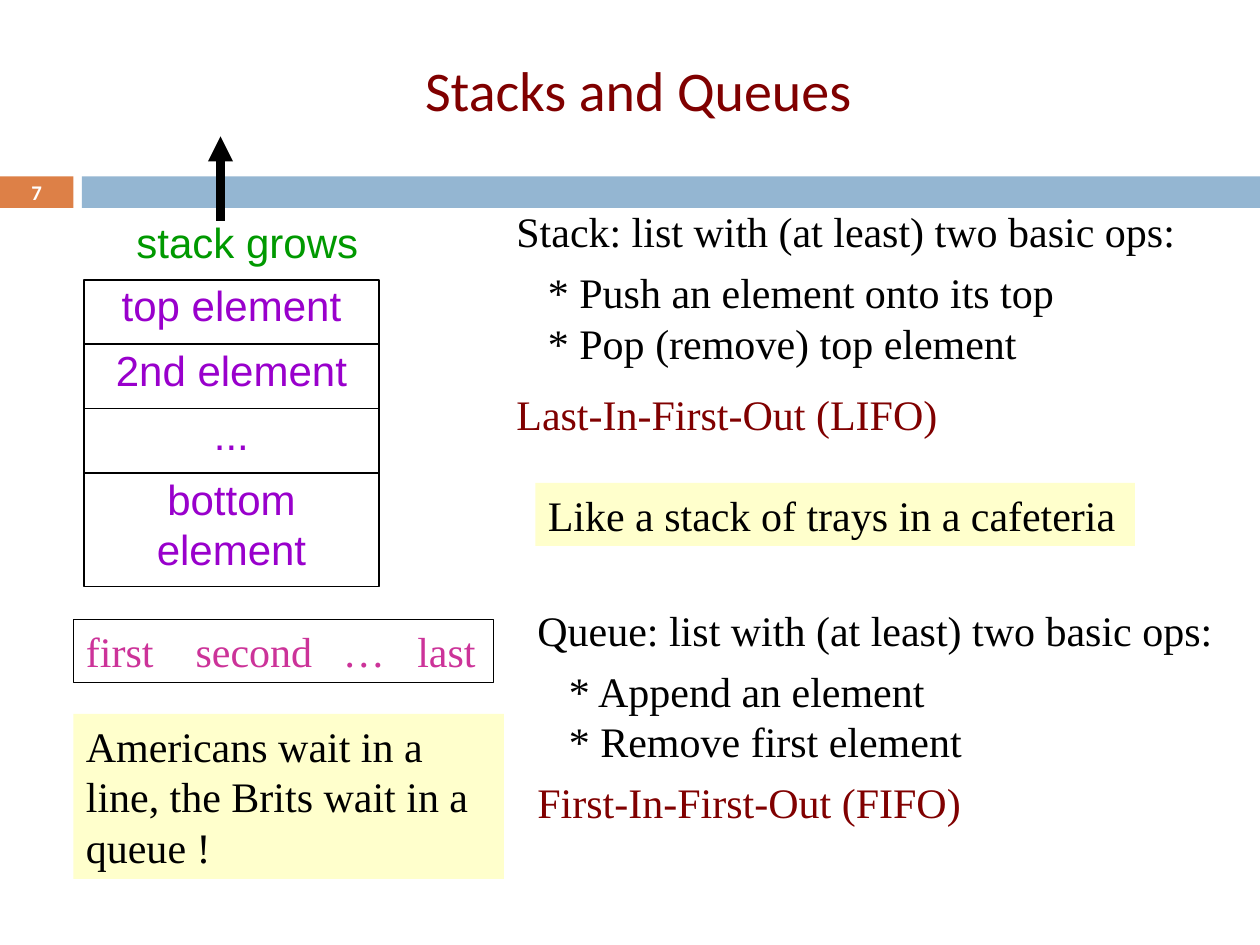
from pptx import Presentation
from pptx.dml.color import RGBColor
from pptx.enum.shapes import MSO_CONNECTOR, MSO_SHAPE
from pptx.enum.text import MSO_ANCHOR, MSO_AUTO_SIZE, PP_ALIGN
from pptx.oxml.ns import qn
from pptx.util import Inches, Pt
from lxml import etree

RECTANGLE = MSO_SHAPE.RECTANGLE
STRAIGHT = MSO_CONNECTOR.STRAIGHT
TOP, MIDDLE = MSO_ANCHOR.TOP, MSO_ANCHOR.MIDDLE
LEFT, CENTER = PP_ALIGN.LEFT, PP_ALIGN.CENTER
GROW = MSO_AUTO_SIZE.SHAPE_TO_FIT_TEXT
FIXED = MSO_AUTO_SIZE.NONE

COLUMNS, ROWS = 120, 90
SERIF, SANS, HEADING = "Times New Roman", "Arial", "Calibri"
BLACK, WHITE, MAROON, CREAM = "000000", "FFFFFF", "800000", "FFFFCC"
PURPLE, GREEN, PINK = "9900CC", "009900", "CC3399"
ORANGE, BLUE = "DD8047", "94B6D2"
DEFAULT_INSETS = (0.1, 0.05, 0.1, 0.05)


def color(value):
    return RGBColor.from_string(value)


class SlideBuilder:
    def __init__(self, deck):
        self.slide = deck.slides.add_slide(deck.slide_layouts[6])
        self.column = deck.slide_width / COLUMNS
        self.row = deck.slide_height / ROWS

    def place(self, x, y, width, height):
        return (round(x * self.column), round(y * self.row),
                round(width * self.column), round(height * self.row))

    def box(self, area, fill=None, line=None, weight=0.75):
        shape = self.slide.shapes.add_shape(RECTANGLE, *self.place(*area))
        shape.shadow.inherit = False
        if fill:
            shape.fill.solid()
            shape.fill.fore_color.rgb = color(fill)
        else:
            shape.fill.background()
        if line:
            shape.line.color.rgb = color(line)
            shape.line.width = Pt(weight)
        else:
            shape.line.fill.background()
        return shape

    def label(self, area):
        return self.slide.shapes.add_textbox(*self.place(*area))

    def frame(self, shape, anchor=TOP, insets=DEFAULT_INSETS, wrap=True, fit=GROW):
        frame = shape.text_frame
        frame.word_wrap = wrap
        frame.auto_size = fit
        frame.vertical_anchor = anchor
        (frame.margin_left, frame.margin_top,
         frame.margin_right, frame.margin_bottom) = map(Inches, insets)
        return frame

    def text(self, frame, words, ink=BLACK, font=SERIF, size=24, bold=False,
             align=LEFT, before=0, indent=0, tabs=()):
        paragraph = frame.paragraphs[0]
        if paragraph.runs:
            paragraph = frame.add_paragraph()
        paragraph.alignment = align
        paragraph.space_before = Pt(before)
        properties = paragraph._p.get_or_add_pPr()
        if indent:
            properties.set("marL", str(Inches(indent)))
            properties.set("indent", "0")
        if tabs:
            stops = etree.SubElement(properties, qn("a:tabLst"))
            for stop in tabs:
                etree.SubElement(stops, qn("a:tab"), pos=str(Inches(stop)), algn="l")
        run = paragraph.add_run()
        run.text = words
        run.font.name = font
        run.font.size = Pt(size)
        run.font.bold = bold
        run.font.color.rgb = color(ink)

    def operations(self, area, heading, steps, rule, rule_gap):
        frame = self.frame(self.label(area))
        self.text(frame, heading)
        for index, step in enumerate(steps):
            self.text(frame, step, before=0 if index else 6, indent=0.25)
        self.text(frame, rule, MAROON, before=rule_gap)

    def arrow(self, start, end, weight):
        x1, y1, x2, y2 = self.place(*start, *end)
        connector = self.slide.shapes.add_connector(STRAIGHT, x1, y1, x2, y2)
        connector.line.color.rgb = color(BLACK)
        connector.line.width = Pt(weight)
        etree.SubElement(connector.line._get_or_add_ln(), qn("a:tailEnd"), type="triangle")
        etree.SubElement(connector._element.spPr, qn("a:effectLst"))


def main():
    deck = Presentation()
    deck.slide_width, deck.slide_height = Inches(10), Inches(7.5)
    page = SlideBuilder(deck)

    page.box((0, 16.8, 7, 3), ORANGE)
    page.box((7.8, 16.8, 112.2, 3), BLUE)
    title = page.frame(page.label((6.5, 4, 109.1, 9)), MIDDLE,
                       (0.1, 0.05, 0.14, 0.05), fit=FIXED)
    page.text(title, "Stacks and Queues", MAROON, HEADING, 32, align=CENTER)
    number = page.frame(page.label((0, 16.7, 7, 3.2)), MIDDLE, fit=FIXED)
    page.text(number, "7", WHITE, HEADING, 11.9, True, CENTER)

    stack_top, cell_height, bottom_height = 26.64, 6.14, 10.8
    elements = ["top element", "2nd element", "...", "bottom element"]
    for index, element in enumerate(elements):
        height = bottom_height if element == elements[-1] else cell_height
        cell = page.box((8, stack_top + index * cell_height, 28.1, height),
                        line=BLACK, weight=1)
        frame = page.frame(cell, insets=(0, 0, 0.04, 0), fit=FIXED)
        page.text(frame, element, PURPLE, SANS, align=CENTER, before=14, indent=0.04)

    growth = page.frame(page.label((13, 20.6, 22.6, 4.8)), insets=(0, 0, 0.1, 0), wrap=False)
    page.text(growth, "stack grows", GREEN, SANS, before=4.1)
    page.arrow((21, 21), (21, 13), 4.75)

    page.operations((48, 19, 81, 23.6), "Stack: list with (at least) two basic ops:",
                    ["* Push an element onto its top", "* Pop (remove) top element"],
                    "Last-In-First-Out (LIFO)", 12)
    trays = page.frame(page.box((51, 46, 57.1, 6), CREAM), wrap=False)
    page.text(trays, "Like a stack of trays in a cafeteria")

    queue = page.frame(page.box((7, 59, 40, 6), line=BLACK))
    page.text(queue, "first\tsecond\t…\tlast", PINK, tabs=(0.87, 2.04, 2.63))
    page.operations((50, 57, 68, 22.6), "Queue: list with (at least) two basic ops:",
                    ["* Append an element", "* Remove first element"],
                    "First-In-First-Out (FIFO)", 6)
    waiting = page.frame(page.box((7, 68, 41, 15.7), CREAM))
    page.text(waiting, "Americans wait in a line, the Brits wait in a queue !")

    deck.save("out.pptx")


if __name__ == "__main__":
    main()
